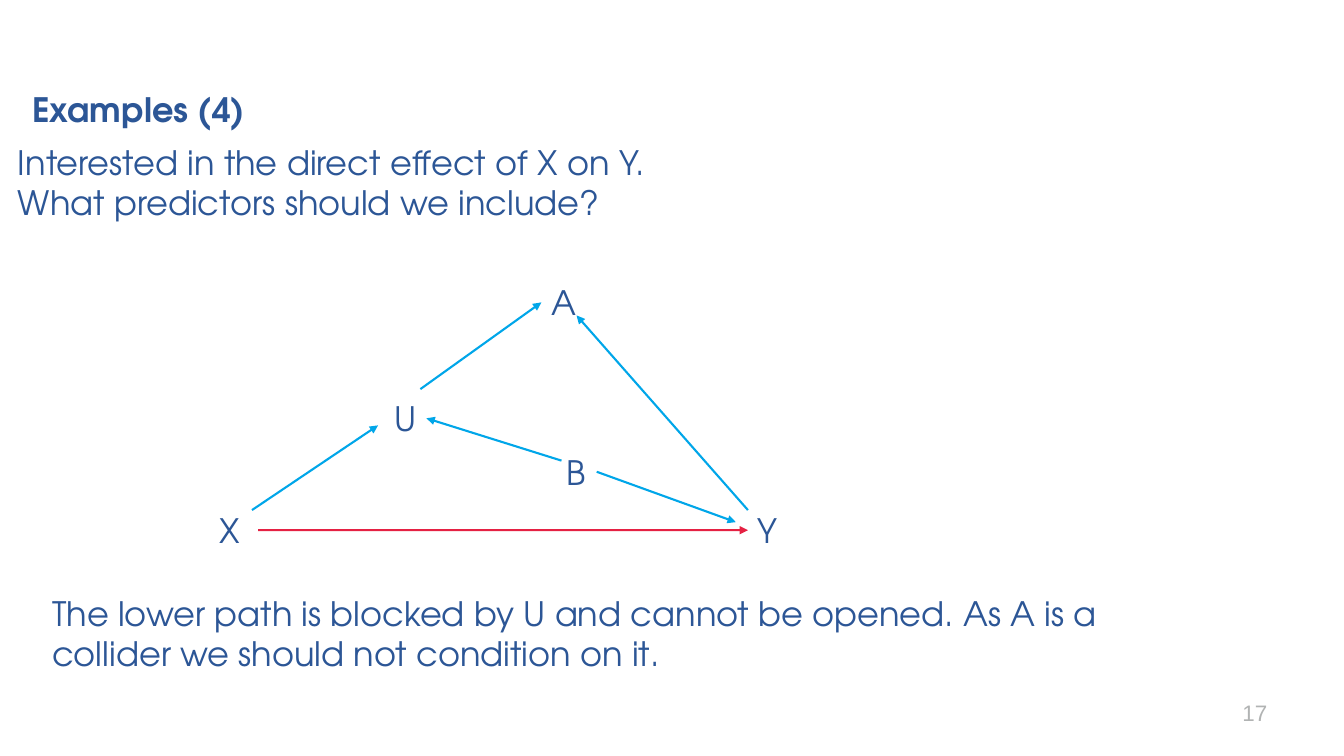
from lxml.etree import SubElement as Sub
from pptx import Presentation
from pptx.dml.color import RGBColor as Rgb
from pptx.enum.shapes import MSO_CONNECTOR as Link
from pptx.enum.text import MSO_ANCHOR as Anchor, MSO_AUTO_SIZE as Auto, PP_ALIGN as Align
from pptx.oxml.ns import qn
from pptx.util import Inches, Pt

HUE = {"navy": "2C5696", "sky": "00A6E9", "red": "E52143", "gray": "B1B3B3"}
FONT = "TeX Gyre Adventor"
LEFT, RIGHT = 1, 3

deck = Presentation()
deck.slide_width, deck.slide_height = Inches(13.33), Inches(7.5)
slide = deck.slides.add_slide(deck.slide_layouts[5])


def spot(x, y):
    """Turn percent of the slide's width and height into lengths."""
    return int(deck.slide_width * x / 100), int(deck.slide_height * y / 100)


def write(text, x, y, w, h, box=None, size=24, font=FONT, hue="navy", bold=False,
          align=Align.LEFT, anchor=Anchor.TOP, wrap=True, fit=Auto.SHAPE_TO_FIT_TEXT):
    box = box or slide.shapes.add_textbox(0, 0, 0, 0)
    box.left, box.top = spot(x, y)
    box.width, box.height = spot(w, h)
    frame = box.text_frame
    frame.text = text
    frame.word_wrap, frame.auto_size, frame.vertical_anchor = wrap, fit, anchor
    for para in frame.paragraphs:
        para.alignment = align
        para.font.name, para.font.size, para.font.bold = font, Pt(size), bold
        para.font.color.rgb = Rgb.from_string(HUE[hue])
    return box


# Text
write("Examples (4)", 1.65, 11.07, 45.3, 6.67, box=slide.shapes.title, bold=True)
write("Interested in the direct effect of X on Y.\nWhat predictors should we include?",
      0.6, 18.13, 92.5, 12.13)
write("The lower path is blocked by U and cannot be opened. "
      "As A is a collider we should not condition on it.", 3.15, 77.73, 83.1, 12.13)
write("17", 83.78, 91.6, 11.25, 5.33, size=16, font="Arial", hue="gray",
      align=Align.RIGHT, anchor=Anchor.MIDDLE, fit=Auto.NONE)

# Nodes of the graph: name, left, top, width, wrap
nodes = {}
for name, x, y, w, wrap in [
    ("U", 28.58, 52, 6.3, True),
    ("X", 15.6, 66.8, 17.4, True),
    ("Y", 55.65, 66.8, 4.35, True),
    ("A", 40.28, 36.67, 3, False),
    ("B", 41.4, 59.07, 3, False),
]:
    nodes[name] = write(name, x, y, w, 6.67, wrap=wrap)

# Arrows: start, end, colour, node joined at its right, node joined at its left
for start, end, hue, tail, head in [
    ((41.78, 60.93), (31.73, 55.33), "sky", None, None),
    ((55.65, 67.47), (42.9, 41.73), "sky", None, None),
    ((18.75, 67.47), (28.13, 56.27), "sky", None, None),
    ((19.2, 70.13), (55.65, 70.13), "red", None, "Y"),
    ((31.28, 51.47), (40.28, 40), "sky", None, "A"),
    ((44.4, 62.4), (54.75, 69.07), "sky", "B", None),
]:
    arrow = slide.shapes.add_connector(Link.STRAIGHT, *spot(*start), *spot(*end))
    if tail:
        arrow.begin_connect(nodes[tail], RIGHT)
    if head:
        arrow.end_connect(nodes[head], LEFT)
    arrow.line.width = Pt(1.5)
    arrow.line.color.rgb = Rgb.from_string(HUE[hue])
    Sub(arrow.line._get_or_add_ln(), qn("a:tailEnd"), type="triangle")
    Sub(arrow._element.spPr, qn("a:effectLst"))

deck.save("out.pptx")
